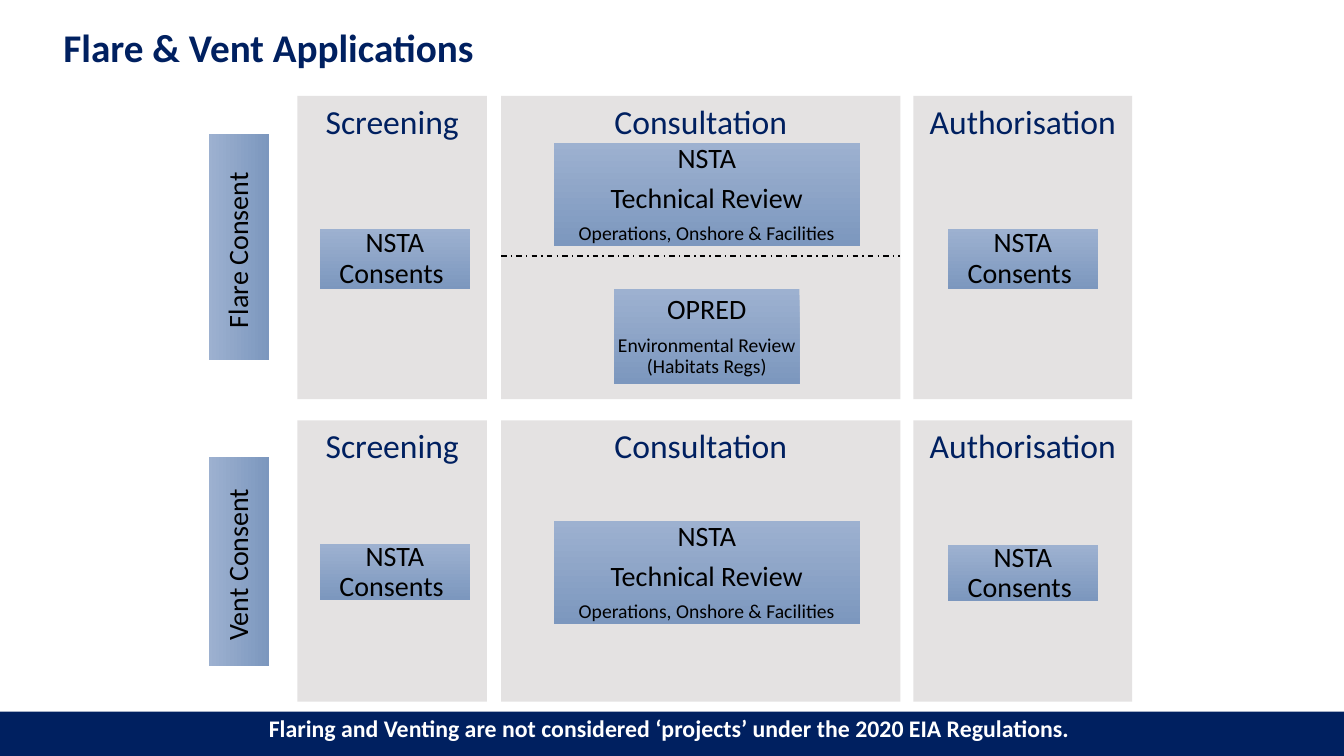
"""Build the flare and vent consent applications slide."""
from lxml import etree
from pptx import Presentation
from pptx.dml.color import RGBColor
from pptx.enum import dml, shapes, text
from pptx.oxml.ns import qn
from pptx.util import Inches, Pt

NAVY, GREY, WHITE, BLACK = "002060", "E4E2E2", "FFFFFF", "000000"
LIGHT, DARK = "9DB1D0", "7C97BE"
STAGES = [("Screening", 2.95, 1.88), ("Consultation", 4.97, 3.96),
          ("Authorisation", 9.06, 2.17)]
CONSENTS = [("NSTA Consents ", 20)]
REVIEW = [("NSTA", 20), ("Technical Review", 20),
          ("Operations, Onshore & Facilities", 14)]
HABITATS = [("OPRED", 20), ("Environmental Review (Habitats Regs)", 14)]


def hue(code):
    """Return the colour of a hex string."""
    return RGBColor.from_string(code)


def write(shape, lines, color, bold=False, align=text.PP_ALIGN.CENTER,
          space=None, gap=0):
    """Write sized lines into a shape; gap is a share of the text size."""
    frame = shape.text_frame
    frame.word_wrap = True
    frame.text = "\n".join(line for line, size in lines)
    for para, (line, size) in zip(frame.paragraphs, lines):
        para.alignment = align
        para.line_spacing = space
        para.space_after = Pt(size * gap)
        for run in para.runs:
            font = run.font
            font.name, font.size, font.bold = "Calibri", Pt(size), bold
            font.color.rgb = hue(color)


def inset(frame, left, top, right, bottom):
    """Set the four margins of a text frame."""
    frame.margin_left, frame.margin_top = Inches(left), Inches(top)
    frame.margin_right, frame.margin_bottom = Inches(right), Inches(bottom)


def block(slide, left, top, width, height):
    """Add a rectangle without line or shadow."""
    shape = slide.shapes.add_shape(
        shapes.MSO_SHAPE.RECTANGLE, Inches(left), Inches(top),
        Inches(width), Inches(height))
    shape.shadow.inherit = False
    shape.line.fill.background()
    return shape


def panel(slide, place, color, label, size, ink, **style):
    """Add a plain rectangle with its label at the top."""
    shape = block(slide, *place)
    shape.fill.solid()
    shape.fill.fore_color.rgb = hue(color)
    shape.text_frame.vertical_anchor = text.MSO_ANCHOR.TOP
    write(shape, [(label, size)], ink, **style)


def card(slide, place, lines, turn=0, pad=0.02):
    """Add a shaded box with centred lines."""
    shape = block(slide, *place)
    shape.rotation = turn
    shape.fill.gradient()
    shape.fill.gradient_angle = 270
    for stop, color, spot in zip(shape.fill.gradient_stops, (LIGHT, DARK), (0, 1)):
        stop.color.rgb = hue(color)
        stop.position = spot
    shape.text_frame.vertical_anchor = text.MSO_ANCHOR.MIDDLE
    inset(shape.text_frame, pad, pad, pad, pad)
    write(shape, lines, BLACK, space=0.9, gap=0.35)


def title(slide, label):
    """Add the slide title."""
    box = slide.shapes.add_textbox(
        Inches(0.63), Inches(0.28), Inches(7.76), Inches(0.55))
    inset(box.text_frame, 0, 0, 0.1, 0.05)
    write(box, [(label, 28)], NAVY, bold=True,
          align=text.PP_ALIGN.LEFT, space=0.9)


def divide(slide, left, right, top):
    """Add a level dash-dot line."""
    line = slide.shapes.add_connector(
        shapes.MSO_CONNECTOR.STRAIGHT, Inches(left), Inches(top),
        Inches(right), Inches(top))
    line.line.color.rgb = hue(BLACK)
    line.line.width = Pt(1)
    line.line.dash_style = dml.MSO_LINE.DASH_DOT
    etree.SubElement(line._element.spPr, qn("a:effectLst"))


def stages(slide, top, height):
    """Add the three stage panels of one consent."""
    for label, left, width in STAGES:
        panel(slide, (left, top, width, height), GREY, label, 24, NAVY)


def main():
    """Build and save the slide."""
    deck = Presentation()
    deck.slide_width, deck.slide_height = Inches(13.33), Inches(7.5)
    slide = deck.slides.add_slide(deck.slide_layouts[6])
    title(slide, "Flare & Vent Applications")
    panel(slide, (0, 7.06, 13.33, 0.44), NAVY,
          "Flaring and Venting are not considered ‘projects’ under the "
          "2020 EIA Regulations. ", 17, WHITE, bold=True, space=0.9)

    rows = [("Flare Consent ", (1.25, 2.15, 2.24, 0.6), 0.95, 3.01,
             2.27, 2.27, 0.6, 1.42),
            ("Vent Consent ", (1.33, 5.27, 2.08, 0.6), 4.17, 2.79,
             5.4, 5.41, 0.55, 5.17)]
    for name, place, top, height, first, last, tall, review in rows:
        card(slide, place, [(name, 20)], turn=270, pad=0.03)
        stages(slide, top, height)
        card(slide, (3.17, first, 1.49, tall), CONSENTS)
        card(slide, (5.49, review, 3.04, 1.02), REVIEW)
        card(slide, (9.4, last, 1.49, tall), CONSENTS)
    card(slide, (6.09, 2.87, 1.84, 0.94), HABITATS)
    divide(slide, 4.97, 8.93, 2.54)
    deck.save("out.pptx")


if __name__ == "__main__":
    main()
